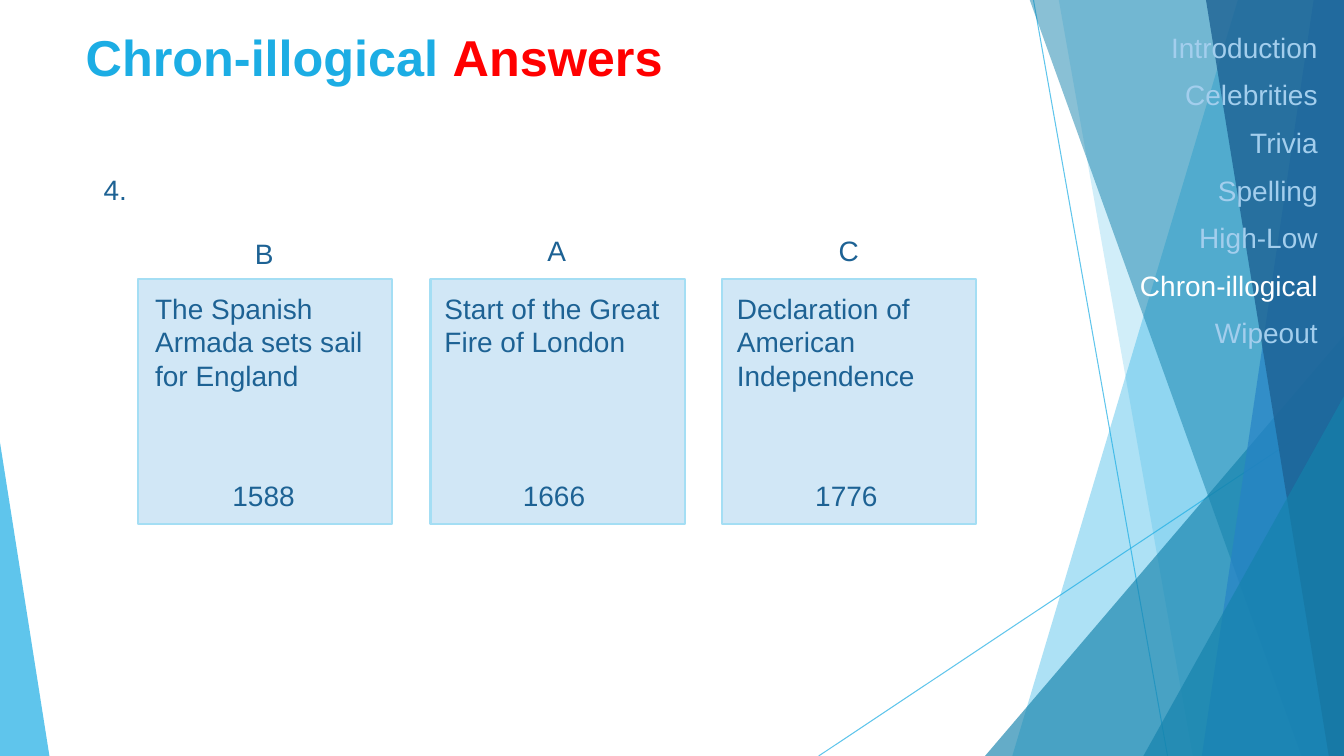
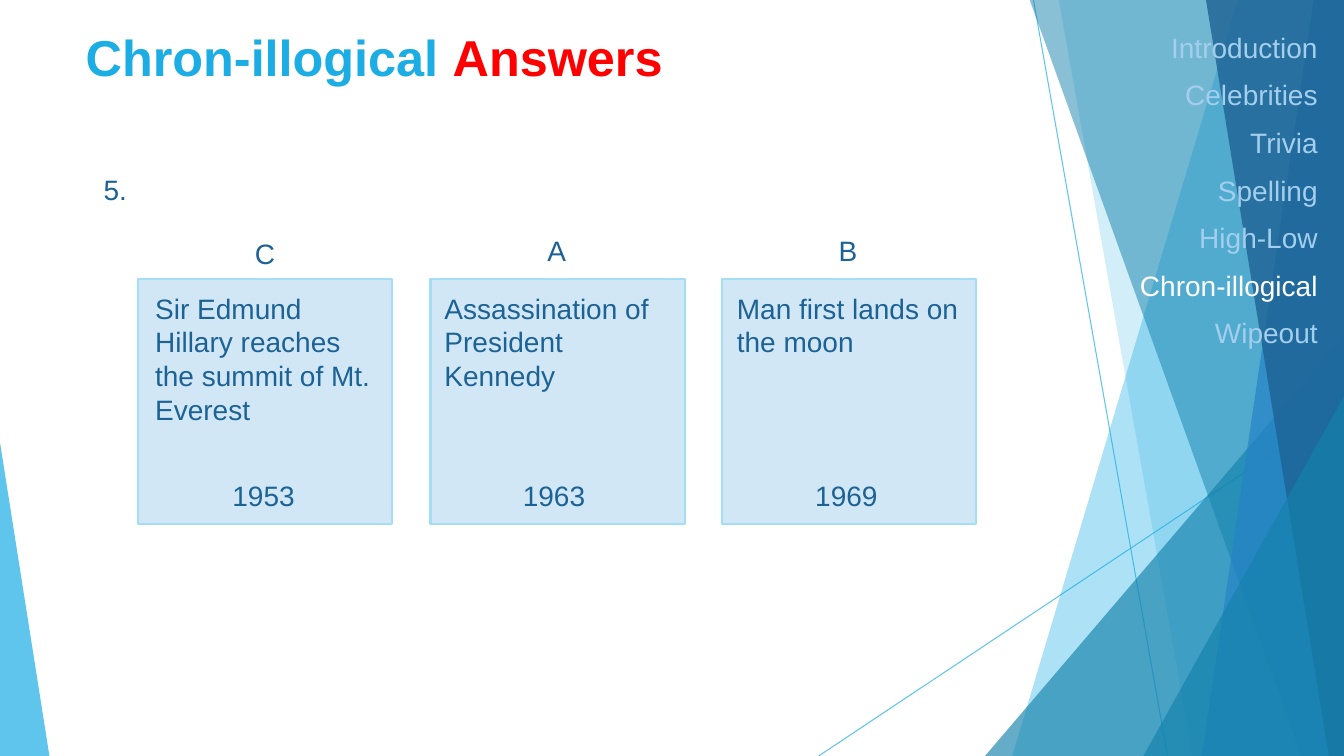
from dataclasses import dataclass
from typing import NamedTuple

from pptx import Presentation
from pptx.dml.color import RGBColor
from pptx.enum.shapes import MSO_CONNECTOR, MSO_SHAPE
from pptx.enum.text import MSO_ANCHOR, MSO_AUTO_SIZE, PP_ALIGN
from pptx.oxml.xmlchemy import OxmlElement
from pptx.util import Inches, Pt


# Theme: colours and type sizes
@dataclass(frozen=True)
class Theme:
    font: str = "Arial"
    head: int = 36
    body: int = 20
    sky: str = "1CADE4"
    teal: str = "1482AC"
    blue: str = "2683C6"
    navy: str = "1D6294"
    pale: str = "A3CEED"
    card: str = "D1E7F6"
    edge: str = "A4DEF4"
    red: str = "FF0000"
    white: str = "FFFFFF"


class Ray(NamedTuple):
    x1: float
    y1: float
    x2: float
    y2: float


class Band(NamedTuple):
    """A strip from a slanted left edge to the right side."""
    top: float
    base: float
    hue: str
    alpha: int


class Wedge(NamedTuple):
    """A right triangle standing on the lower edge."""
    left: float
    top: float
    width: float
    apex: int
    hue: str
    alpha: int


class Column(NamedTuple):
    card: float
    text: float
    width: float
    mark: float
    year: float


class Event(NamedTuple):
    mark: str
    text: str
    year: str


class Round(NamedTuple):
    label: str
    events: tuple[Event, ...]


T = Theme()
WIDE, HIGH = 13.33, 7.5

RAYS = (Ray(10.25, 0, 11.58, HIGH), Ray(WIDE, 4.03, 8.12, HIGH))
DECOR = (
    Band(12.28, 10.04, T.sky, 36),
    Band(10.5, 11.83, T.sky, 20),
    Wedge(9.77, 3.33, 3.56, 1, T.teal, 66),
    Band(10.21, 12.91, T.teal, 50),
    Band(13.03, 11.92, T.blue, 70),
    Band(11.96, 13.18, T.navy, 80),
    Wedge(11.34, 3.93, 1.99, 1, T.teal, 66),
    Wedge(0, 4.39, 0.49, 0, T.sky, 70),
)
COLUMNS = (
    Column(1.37, 1.44, 2.36, 2.3, 2.2),
    Column(4.27, 4.31, 2.38, 2.27, 5.08),
    Column(7.16, 7.21, 2.47, 2.27, 7.98),
)
MENU = ("Introduction", "Celebrities", "Trivia", "Spelling",
        "High-Low", "Chron-illogical", "Wipeout")
TOPIC = "Chron-illogical"
ROUNDS = (
    Round("4.", (
        Event("B", "The Spanish Armada sets sail for England", "1588"),
        Event("A", "Start of the Great Fire of London", "1666"),
        Event("C", "Declaration of American Independence", "1776"),
    )),
    Round("5.", (
        Event("C", "Sir Edmund Hillary reaches the summit of Mt. Everest", "1953"),
        Event("A", "Assassination of President Kennedy", "1963"),
        Event("B", "Man first lands on the moon", "1969"),
    )),
)


# Helpers
def style(run, hue: str, size: int = T.body, bold: bool = False) -> None:
    font = run.font
    font.name, font.size, font.bold = T.font, Pt(size), bold
    font.color.rgb = RGBColor.from_string(hue)


def paint(fill, hue: str) -> None:
    fill.solid()
    fill.fore_color.rgb = RGBColor.from_string(hue)


def fade(shape, alpha: int) -> None:
    for clr in shape._element.xpath(".//a:srgbClr"):
        node = OxmlElement("a:alpha")
        node.set("val", str(alpha * 1000))
        clr.append(node)


def place(shape, left: float, top: float, width: float, height: float) -> None:
    shape.left, shape.top = Inches(left), Inches(top)
    shape.width, shape.height = Inches(width), Inches(height)


# Shared backdrop
def add_ray(slide, ray: Ray):
    line = slide.shapes.add_connector(
        MSO_CONNECTOR.STRAIGHT, *(Inches(v) for v in ray))
    line.line.width = Pt(0.75)
    paint(line.line.fill, T.sky)
    line._element.spPr.append(OxmlElement("a:effectLst"))
    fade(line, 70)
    return line


def add_decor(slide, item: Band | Wedge):
    if isinstance(item, Band):
        pen = slide.shapes.build_freeform(Inches(item.top), Inches(-0.01))
        ends = ((WIDE, -0.01), (WIDE, HIGH), (item.base, HIGH))
        pen.add_line_segments([(Inches(x), Inches(y)) for x, y in ends])
        shape = pen.convert_to_shape()
    else:
        shape = slide.shapes.add_shape(
            MSO_SHAPE.ISOSCELES_TRIANGLE, Inches(item.left), Inches(item.top),
            Inches(item.width), Inches(HIGH - item.top))
        shape.adjustments[0] = item.apex
    shape.shadow.inherit = False
    shape.line.fill.background()
    paint(shape.fill, item.hue)
    fade(shape, item.alpha)
    return shape


def set_backdrop(slide, layout) -> None:
    """Draw the backdrop once and move it to the layout."""
    parts = [add_ray(slide, ray) for ray in RAYS]
    parts += [add_decor(slide, item) for item in DECOR]
    for num, part in enumerate(parts):
        part._element.xpath(".//p:cNvPr")[0].set("id", str(100 + num))
        layout.shapes._spTree.insert(2 + num, part._element)


# Slide parts
def add_title(slide) -> None:
    title = slide.shapes.title
    place(title, 0.75, 0.21, 11.37, 1.26)
    frame = title.text_frame
    frame.vertical_anchor = MSO_ANCHOR.TOP
    frame.auto_size = MSO_AUTO_SIZE.NONE
    para = frame.paragraphs[0]
    para.alignment = PP_ALIGN.LEFT
    for text, hue in ((TOPIC + " ", T.sky), ("Answers", T.red)):
        run = para.add_run()
        run.text = text
        style(run, hue, T.head, True)


def add_menu(slide) -> None:
    menu = slide.placeholders[1]
    place(menu, 10.56, 0.25, 2.61, 4.52)
    frame = menu.text_frame
    frame.text = "\n".join(MENU)
    frame.auto_size = MSO_AUTO_SIZE.NONE
    for para in frame.paragraphs:
        para.alignment, para.space_before = PP_ALIGN.RIGHT, Pt(10)
        props = para._p.get_or_add_pPr()
        props.set("marL", "0")
        props.set("indent", "0")
        props.append(OxmlElement("a:buNone"))
        style(para.runs[0], T.white if para.text == TOPIC else T.pale)


def add_text(slide, text: str, left: float, top: float, width: float,
             height: float = 0.44, wrap: bool = False,
             align: PP_ALIGN = PP_ALIGN.LEFT) -> None:
    box = slide.shapes.add_textbox(
        Inches(left), Inches(top), Inches(width), Inches(height))
    frame = box.text_frame
    frame.text = text
    frame.word_wrap = wrap
    frame.auto_size = MSO_AUTO_SIZE.SHAPE_TO_FIT_TEXT
    para = frame.paragraphs[0]
    para.alignment = align
    style(para.runs[0], T.navy)


def add_card(slide, col: Column, event: Event) -> None:
    card = slide.shapes.add_shape(
        MSO_SHAPE.RECTANGLE, Inches(col.card), Inches(2.77),
        Inches(2.52), Inches(2.43))
    card.shadow.inherit = False
    paint(card.fill, T.card)
    paint(card.line.fill, T.edge)
    card.line.width = Pt(1.5)
    add_text(slide, event.mark, col.card + 1.06, col.mark, 0.4)
    add_text(slide, event.text, col.text, 2.84, col.width, 1.11, wrap=True)
    add_text(slide, event.year, col.year, 4.7, 0.83, align=PP_ALIGN.CENTER)


def main() -> None:
    deck = Presentation()
    deck.slide_width, deck.slide_height = Inches(WIDE), Inches(HIGH)
    layout = deck.slide_layouts[1]
    for num, item in enumerate(ROUNDS):
        slide = deck.slides.add_slide(layout)
        if num == 0:
            set_backdrop(slide, layout)
        add_title(slide)
        add_menu(slide)
        add_text(slide, item.label, 0.93, 1.66, 0.44)
        for col, event in zip(COLUMNS, item.events):
            add_card(slide, col, event)
    deck.save("out.pptx")


if __name__ == "__main__":
    main()
